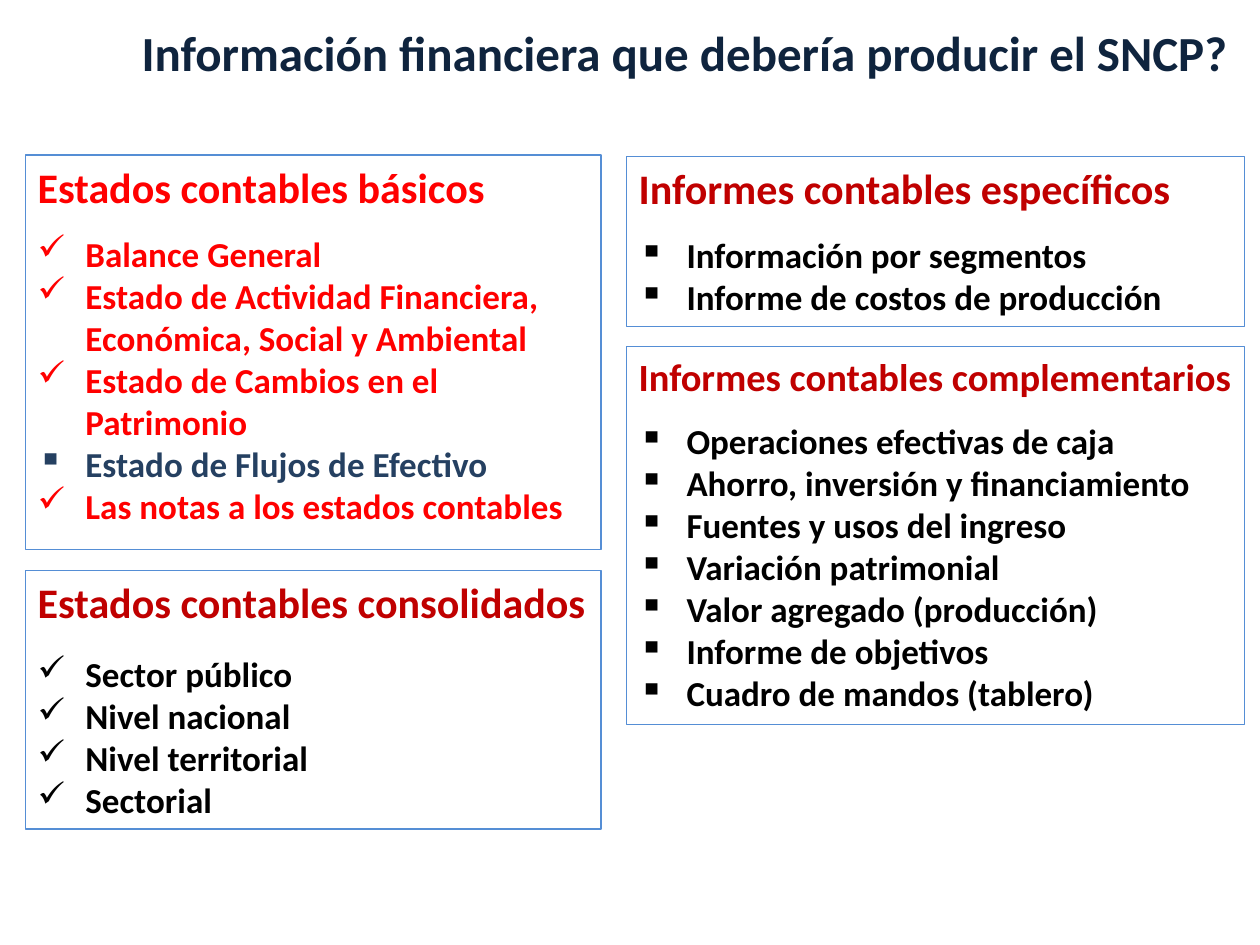
import dataclasses

import pptx
import pptx.dml.color
import pptx.enum.shapes
import pptx.enum.text
import pptx.oxml.ns
import pptx.util
from lxml import etree

ALIGN = pptx.enum.text.PP_ALIGN
CHECK, SQUARE = "✓", "▪"


@dataclasses.dataclass(frozen=True)
class Theme:
    font: str = "Calibri"
    navy: str = "0F243E"
    blue: str = "254061"
    border: str = "558ED5"
    red: str = "FF0000"
    crimson: str = "C00000"
    black: str = "000000"
    title_size: int = 28
    heading_size: int = 24
    small_heading_size: int = 22
    item_size: int = 20
    cell: float = 0.1  # grid cell, inches
    indent: float = 0.38  # hanging indent, inches


class SlideBuilder:
    def __init__(self, deck, theme):
        self.theme = theme
        self.page = deck.slides.add_slide(deck.slide_layouts[6])

    def grid(self, *cells):
        return [pptx.util.Inches(cell * self.theme.cell) for cell in cells]

    def style(self, para, size, color, align):
        para.alignment = align
        para.font.name = self.theme.font
        para.font.size = pptx.util.Pt(size)
        para.font.bold = True
        para.font.color.rgb = pptx.dml.color.RGBColor.from_string(color)

    def title(self, text, place):
        box = self.page.shapes.add_textbox(*self.grid(*place))
        box.text_frame.word_wrap = True
        para = box.text_frame.paragraphs[0]
        para.text = text
        self.style(para, self.theme.title_size, self.theme.navy, ALIGN.CENTER)

    def bullet(self, para, mark):
        properties = para._p.get_or_add_pPr()
        indent = pptx.util.Inches(self.theme.indent)
        properties.set("marL", str(indent))
        properties.set("indent", str(-indent))
        element = etree.SubElement(properties, pptx.oxml.ns.qn("a:buChar"))
        element.set("char", mark)

    def panel(self, heading, place, items, size, color, gap=12, align=ALIGN.LEFT):
        box = self.page.shapes.add_shape(
            pptx.enum.shapes.MSO_SHAPE.RECTANGLE, *self.grid(*place))
        box.shadow.inherit = False
        box.fill.background()
        box.line.color.rgb = pptx.dml.color.RGBColor.from_string(self.theme.border)
        box.line.width = pptx.util.Pt(0.75)
        frame = box.text_frame
        frame.word_wrap = True
        frame.vertical_anchor = pptx.enum.text.MSO_ANCHOR.TOP
        para = frame.paragraphs[0]
        para.text = heading
        self.style(para, size, color, ALIGN.JUSTIFY)
        for number, (mark, text, item_color) in enumerate(items):
            para = frame.add_paragraph()
            para.text = text
            if number == 0:
                para.space_before = pptx.util.Pt(gap)
            self.bullet(para, mark)
            self.style(para, self.theme.item_size, item_color, align)


def main():
    theme = Theme()
    deck = pptx.Presentation()
    deck.slide_width = pptx.util.Inches(10)
    deck.slide_height = pptx.util.Inches(7.5)
    slide = SlideBuilder(deck, theme)

    def marked(mark, *texts):
        return [(mark, text, theme.black) for text in texts]

    slide.title("Información financiera que debería producir el SNCP?",
                (9.8, 1.3, 89, 7.9))

    # Left column: statements
    left, left_width = 2, 45.7
    slide.panel("Estados contables básicos", (left, 12.3, left_width, 31.3), [
        (CHECK, "Balance General", theme.red),
        (CHECK, "Estado de Actividad Financiera, Económica, Social y Ambiental",
         theme.red),
        (CHECK, "Estado de Cambios en el Patrimonio", theme.red),
        (SQUARE, "Estado de Flujos de Efectivo", theme.blue),
        (CHECK, "Las notas a los estados contables", theme.red),
    ], theme.heading_size, theme.red)
    slide.panel("Estados contables consolidados", (left, 45.3, left_width, 20.5),
                marked(CHECK, "Sector público", "Nivel nacional",
                       "Nivel territorial", "Sectorial"),
                theme.heading_size, theme.crimson, gap=14.5, align=ALIGN.JUSTIFY)

    # Right column: reports
    right, right_width = 49.7, 49.1
    slide.panel("Informes contables específicos", (right, 12.4, right_width, 13.5),
                marked(SQUARE, "Información por segmentos",
                       "Informe de costos de producción"),
                theme.heading_size, theme.crimson)
    slide.panel("Informes contables complementarios", (right, 27.5, right_width, 30),
                marked(SQUARE, "Operaciones efectivas de caja",
                       "Ahorro, inversión y financiamiento",
                       "Fuentes y usos del ingreso", "Variación patrimonial",
                       "Valor agregado (producción)", "Informe de objetivos",
                       "Cuadro de mandos (tablero)"),
                theme.small_heading_size, theme.crimson)

    deck.save("out.pptx")


if __name__ == "__main__":
    main()
